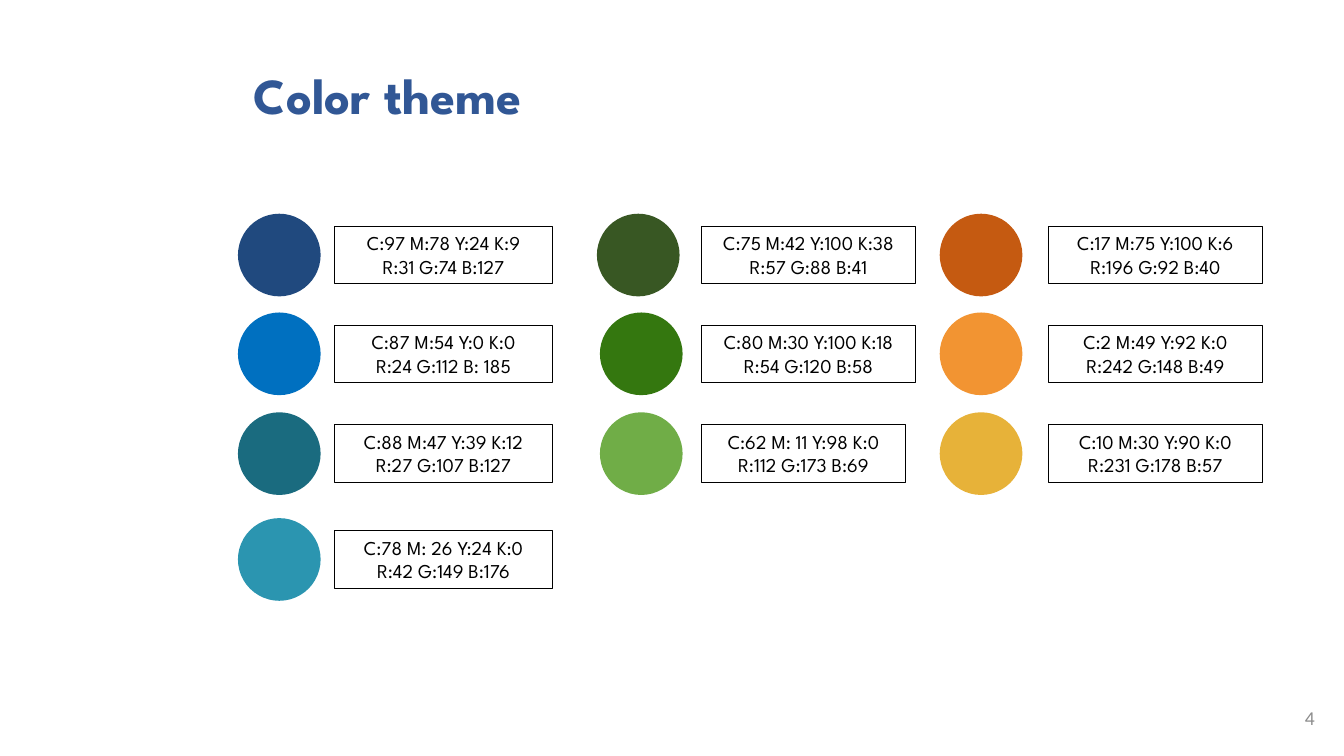
from dataclasses import dataclass

from pptx import Presentation
from pptx.dml.color import RGBColor
from pptx.enum.shapes import MSO_SHAPE
from pptx.enum.text import MSO_ANCHOR, MSO_AUTO_SIZE, PP_ALIGN
from pptx.util import Inches, Pt

CIRCLE, BOX = MSO_SHAPE.OVAL, MSO_SHAPE.RECTANGLE
LEFT, CENTER, RIGHT = PP_ALIGN.LEFT, PP_ALIGN.CENTER, PP_ALIGN.RIGHT
MIDDLE, TOP = MSO_ANCHOR.MIDDLE, MSO_ANCHOR.TOP
GROW = MSO_AUTO_SIZE.SHAPE_TO_FIT_TEXT

WHITE = RGBColor(0xFF, 0xFF, 0xFF)
BLACK = RGBColor(0x00, 0x00, 0x00)
GRAY = RGBColor(0x8C, 0x8C, 0x8C)
TITLE_BLUE = RGBColor(0x31, 0x57, 0x95)
NAVY = RGBColor(0x20, 0x49, 0x7E)
BLUE = RGBColor(0x00, 0x70, 0xC0)
TEAL = RGBColor(0x1A, 0x6B, 0x7F)
AQUA = RGBColor(0x2B, 0x95, 0xB0)
FOREST = RGBColor(0x38, 0x57, 0x23)
GREEN = RGBColor(0x34, 0x77, 0x0F)
LIME = RGBColor(0x70, 0xAD, 0x47)
RUST = RGBColor(0xC5, 0x5A, 0x11)
ORANGE = RGBColor(0xF2, 0x94, 0x32)
GOLD = RGBColor(0xE7, 0xB2, 0x39)

BRAND_FONT, NUMBER_FONT = "League Spartan", "Calibri"

# Grid, in inches
ROW_TOPS = (2.12, 3.10, 4.09, 5.14)
DIAMETER = 0.82
LABEL_HEIGHT = 0.57
LABEL_DROP = (DIAMETER - LABEL_HEIGHT) / 2


@dataclass
class Swatch:
    color: RGBColor
    cmyk: str
    rgb: str
    circle_shift: float = 0
    label_trim: float = 0


@dataclass
class Column:
    circle_left: float
    label_left: float
    label_width: float
    swatches: tuple


COLUMNS = (
    Column(2.36, 3.32, 2.16, (
        Swatch(NAVY, "C:97 M:78 Y:24 K:9", "R:31 G:74 B:127"),
        Swatch(BLUE, "C:87 M:54 Y:0 K:0", "R:24 G:112 B: 185"),
        Swatch(TEAL, "C:88 M:47 Y:39 K:12", "R:27 G:107 B:127"),
        Swatch(AQUA, "C:78 M: 26 Y:24 K:0", "R:42 G:149 B:176"),
    )),
    Column(5.95, 6.96, 2.12, (
        Swatch(FOREST, "C:75 M:42 Y:100 K:38", "R:57 G:88 B:41", circle_shift=-0.03),
        Swatch(GREEN, "C:80 M:30 Y:100 K:18", "R:54 G:120 B:58"),
        Swatch(LIME, "C:62 M: 11 Y:98 K:0", "R:112 G:173 B:69", label_trim=0.1),
    )),
    Column(9.32, 10.4, 2.12, (
        Swatch(RUST, "C:17 M:75 Y:100 K:6", "R:196 G:92 B:40"),
        Swatch(ORANGE, "C:2 M:49 Y:92 K:0", "R:242 G:148 B:49"),
        Swatch(GOLD, "C:10 M:30 Y:90 K:0", "R:231 G:178 B:57"),
    )),
)


def write(shape, text, size, font, color, align, anchor, bold=False, spacing=None):
    frame = shape.text_frame
    frame.word_wrap = True
    frame.vertical_anchor = anchor
    frame.text = text
    for paragraph in frame.paragraphs:
        paragraph.alignment = align
        paragraph.line_spacing = spacing
        for run in paragraph.runs:
            run.font.size = Pt(size)
            run.font.name = font
            run.font.bold = bold
            run.font.color.rgb = color


def add_filled(slide, kind, left, top, width, height, fill):
    shape = slide.shapes.add_shape(kind, *map(Inches, (left, top, width, height)))
    shape.shadow.inherit = False
    shape.fill.solid()
    shape.fill.fore_color.rgb = fill
    shape.line.fill.background()
    return shape


def add_swatch(slide, column, top, swatch):
    """Draw a colour circle and the boxed colour values beside it."""
    add_filled(slide, CIRCLE, column.circle_left + swatch.circle_shift, top,
               DIAMETER, DIAMETER, swatch.color)
    label = add_filled(slide, BOX, column.label_left, top + LABEL_DROP,
                       column.label_width - swatch.label_trim, LABEL_HEIGHT, WHITE)
    label.line.color.rgb = BLACK
    label.line.width = Pt(0.75)
    write(label, f"{swatch.cmyk}\n{swatch.rgb}", 14, BRAND_FONT, BLACK, CENTER, TOP)
    label.text_frame.auto_size = GROW


def main():
    deck = Presentation()
    deck.slide_width, deck.slide_height = Inches(13.33), Inches(7.5)
    slide = deck.slides.add_slide(deck.slide_layouts[6])

    title = slide.shapes.add_textbox(*map(Inches, (2.42, 0.25, 9.99, 1.45)))
    write(title, "Color theme", 36, BRAND_FONT, TITLE_BLUE, LEFT, MIDDLE,
          bold=True, spacing=0.9)

    for column in COLUMNS:
        for top, swatch in zip(ROW_TOPS, column.swatches):
            add_swatch(slide, column, top, swatch)

    page_number = slide.shapes.add_textbox(*map(Inches, (10.14, 6.92, 3, 0.4)))
    write(page_number, "4", 14, NUMBER_FONT, GRAY, RIGHT, MIDDLE)

    deck.save("out.pptx")


if __name__ == "__main__":
    main()
